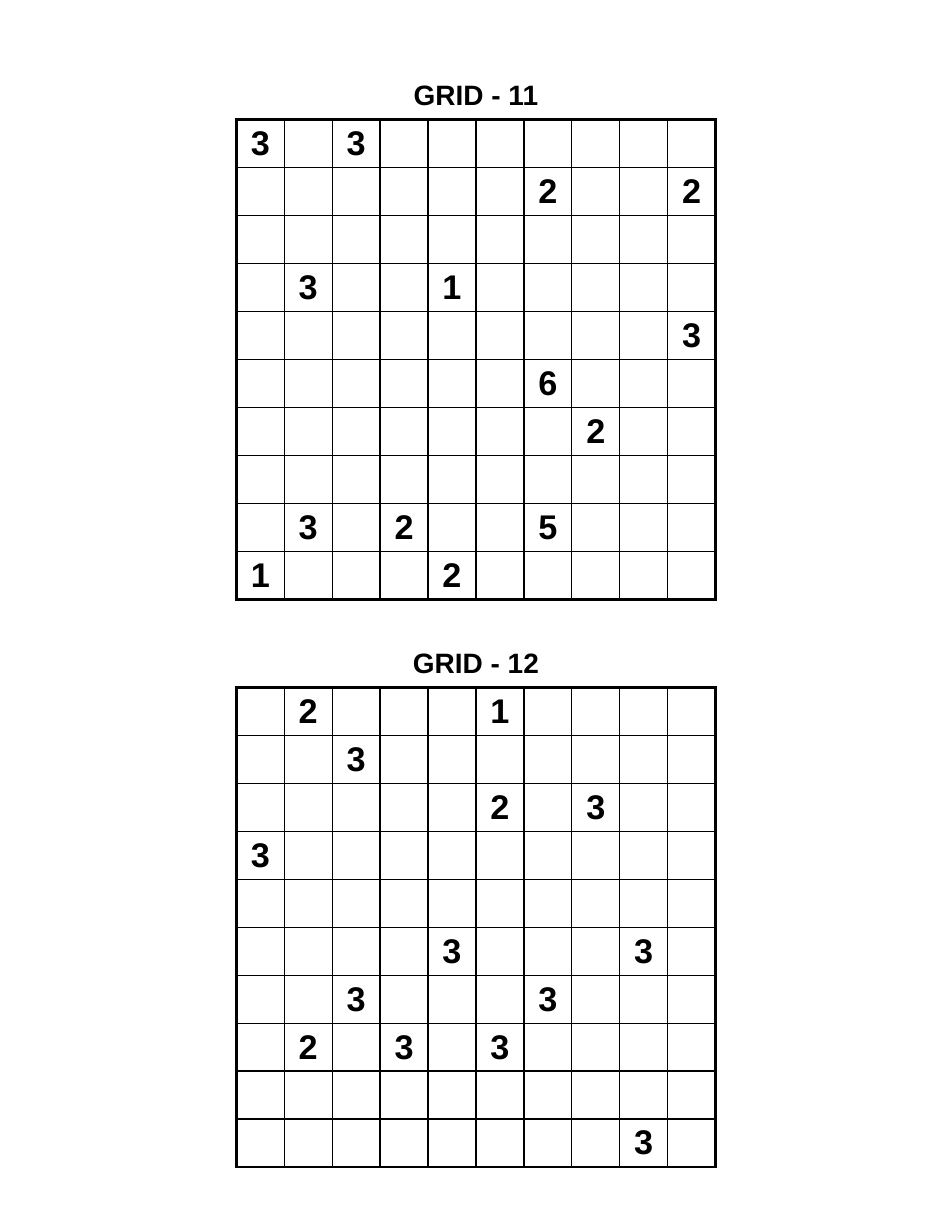
from lxml import etree
from pptx import Presentation
from pptx.dml.color import RGBColor
from pptx.enum.text import MSO_ANCHOR, MSO_AUTO_SIZE, PP_ALIGN
from pptx.oxml.ns import qn
from pptx.util import Inches, Pt

CENTER = PP_ALIGN.CENTER
MIDDLE = MSO_ANCHOR.MIDDLE
GROW = MSO_AUTO_SIZE.SHAPE_TO_FIT_TEXT
COLORS = {"ink": "000000", "paper": "FFFFFF"}
FONT = "Arial"
LEFT, SIDE, COUNT = 2.11, 4.28, 10
HEAD, DROP = 0.3, 0.38
THIN, THICK = 1, 2

GRIDS = [
    ("GRID - 11", 0.69, [
        "3.3.......",
        "......2..2",
        "..........",
        ".3..1.....",
        ".........3",
        "......6...",
        ".......2..",
        "..........",
        ".3.2..5...",
        "1...2.....",
    ]),
    ("GRID - 12", 5.76, [
        ".2...1....",
        "..3.......",
        ".....2.3..",
        "3.........",
        "..........",
        "....3...3.",
        "..3...3...",
        ".2.3.3....",
        "..........",
        "........3.",
    ]),
]


def write(frame, text, size):
    """Put centred bold text into a text frame."""
    frame.text = text
    line = frame.paragraphs[0]
    line.alignment = CENTER
    for run in line.runs:
        font = run.font
        font.name, font.size, font.bold = FONT, Pt(size), True
        font.color.rgb = RGBColor.from_string(COLORS["ink"])


def clear(item):
    """Set all four inner margins of a frame or cell to zero."""
    item.margin_left = item.margin_right = Inches(0)
    item.margin_top = item.margin_bottom = Inches(0)


def add_title(slide, text, top):
    """Add the heading above a grid."""
    box = slide.shapes.add_textbox(Inches(LEFT), Inches(top), Inches(SIDE), Inches(HEAD))
    frame = box.text_frame
    clear(frame)
    frame.word_wrap = True
    frame.auto_size = GROW
    write(frame, text, 18)


def add_edge(cell, side, width):
    """Draw one border of a cell."""
    props = cell._tc.get_or_add_tcPr()
    edge = etree.SubElement(props, qn(f"a:ln{side}"), w=str(Pt(width)))
    fill = etree.SubElement(edge, qn("a:solidFill"))
    etree.SubElement(fill, qn("a:srgbClr"), val=COLORS["ink"])


def style_cell(cell, row, col):
    """Fill a cell and rule it, thick along the outside of the grid."""
    last = COUNT - 1
    outer = {"L": col == 0, "R": col == last, "T": row == 0, "B": row == last}
    for side, rim in outer.items():
        add_edge(cell, side, THICK if rim else THIN)
    cell.fill.solid()
    cell.fill.fore_color.rgb = RGBColor.from_string(COLORS["paper"])
    cell.vertical_anchor = MIDDLE
    clear(cell)


def add_grid(slide, lines, top):
    """Add a square puzzle table with its clue digits."""
    side = Inches(SIDE)
    table = slide.shapes.add_table(COUNT, COUNT, Inches(LEFT), Inches(top), side, side).table
    table.first_row = table.horz_banding = False
    for band in (*table.columns,):
        band.width = Inches(SIDE / COUNT)
    for band in table.rows:
        band.height = Inches(SIDE / COUNT)
    for row, line in enumerate(lines):
        for col, mark in enumerate(line):
            cell = table.cell(row, col)
            style_cell(cell, row, col)
            if mark != ".":
                write(cell.text_frame, mark, 22)


def main():
    """Build the page with its two puzzles."""
    deck = Presentation()
    deck.slide_width, deck.slide_height = Inches(8.5), Inches(11)
    slide = deck.slides.add_slide(deck.slide_layouts[6])
    for title, top, lines in GRIDS:
        add_title(slide, title, top)
        add_grid(slide, lines, top + DROP)
    deck.save("out.pptx")


if __name__ == "__main__":
    main()
